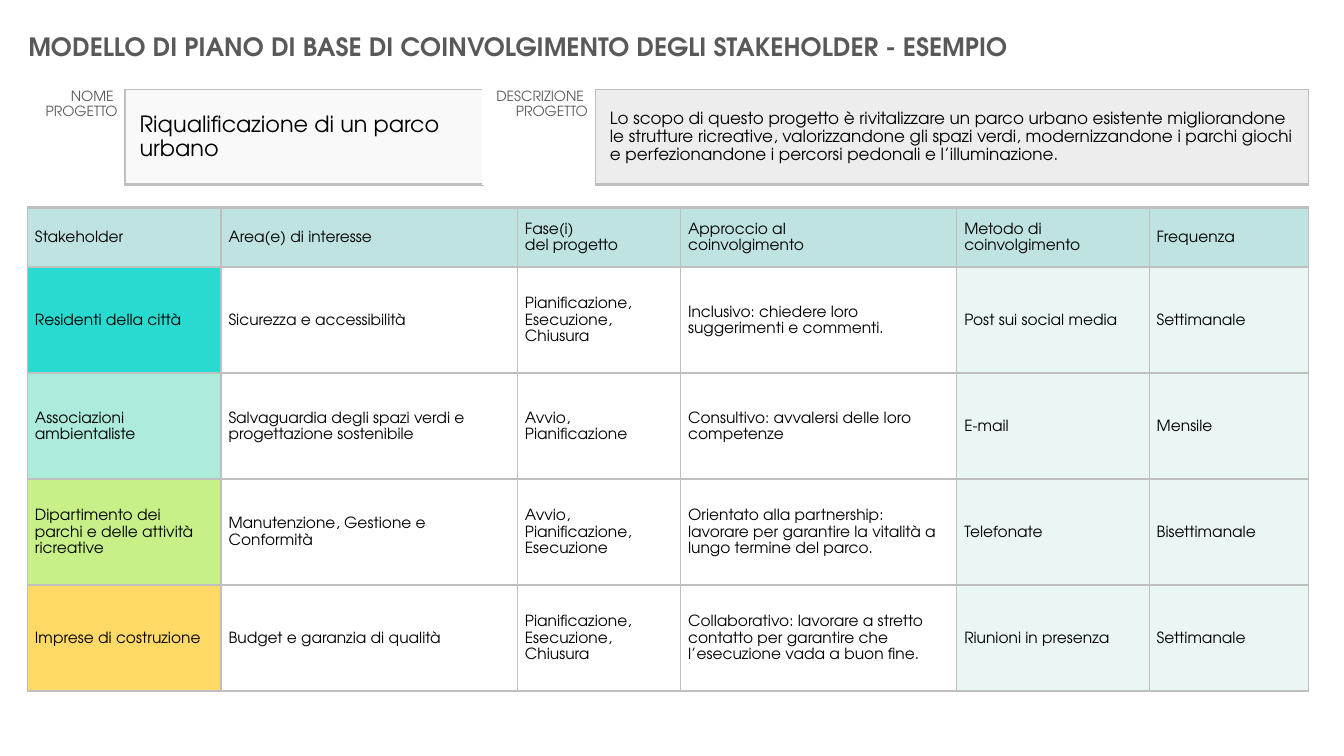
"""Build the stakeholder engagement plan slide for an urban park project."""
from lxml.etree import SubElement
from pptx import Presentation
from pptx.dml.color import RGBColor
from pptx.enum.text import MSO_ANCHOR as Anchor, PP_ALIGN as Align
from pptx.oxml.ns import qn
from pptx.util import Cm, Pt

FONT = "TeX Gyre Adventor"
GREY_TEXT = RGBColor(0x59, 0x59, 0x59)
BLACK = RGBColor(0x00, 0x00, 0x00)
WHITE = RGBColor(0xFF, 0xFF, 0xFF)
BORDER = RGBColor(0xBF, 0xBF, 0xBF)
NAME_FILL = RGBColor(0xF9, 0xF9, 0xF9)
DESCRIPTION_FILL = RGBColor(0xED, 0xED, 0xED)
HEADER_FILL = RGBColor(0xBE, 0xE3, 0xE0)
CONTACT_FILL = RGBColor(0xE9, 0xF6, 0xF4)
TURQUOISE = RGBColor(0x28, 0xDA, 0xCF)
MINT = RGBColor(0xAD, 0xEB, 0xDC)
LIME = RGBColor(0xC8, 0xF0, 0x88)
AMBER = RGBColor(0xFF, 0xD9, 0x66)


def fill_cell(cell, text, size, fill, borders, color=BLACK,
              align=Align.LEFT, anchor=Anchor.MIDDLE, indent=0):
    cell.margin_left = cell.margin_right = Cm(0.19)
    cell.margin_top = cell.margin_bottom = 0
    cell.vertical_anchor = anchor
    paragraph = cell.text_frame.paragraphs[0]
    paragraph.alignment = align
    paragraph.line_spacing = 1.15
    paragraph._p.get_or_add_pPr().set("marL", str(indent))
    for number, line in enumerate(text.split("\n")):
        if number:
            paragraph.add_line_break()
        run = paragraph.add_run()
        run.text = line
        run.font.name = FONT
        run.font.size = Pt(size)
        run.font.color.rgb = color
    if fill is None:
        cell.fill.background()
    else:
        cell.fill.solid()
        cell.fill.fore_color.rgb = fill
    properties = cell._tc.get_or_add_tcPr()
    sides = [side for side in "LRTB" if side in borders]
    for position, side in enumerate(sides):
        line = SubElement(properties, qn(f"a:ln{side}"), w=str(Pt(borders[side])))
        SubElement(SubElement(line, qn("a:solidFill")), qn("a:srgbClr"), val=str(BORDER))
        properties.insert(position, line)


def add_grid(left, top, widths, heights):
    grid = slide.shapes.add_table(len(heights), len(widths), Cm(left), Cm(top),
                                  Cm(sum(widths)), Cm(sum(heights))).table
    grid.first_row = grid.horz_banding = False
    for column, width in zip(grid.columns, widths):
        column.width = Cm(width)
    for row, height in zip(grid.rows, heights):
        row.height = Cm(height)
    return grid


presentation = Presentation()
presentation.slide_width = Cm(33.87)
presentation.slide_height = Cm(19.05)
slide = presentation.slides.add_slide(presentation.slide_layouts[5])

title = slide.shapes.title
title.left, title.top, title.width, title.height = Cm(0.46), Cm(0.66), Cm(30.38), Cm(1.02)
title.text_frame.vertical_anchor = Anchor.TOP
heading = title.text_frame.paragraphs[0]
heading.alignment = Align.LEFT
heading_run = heading.add_run()
heading_run.text = "MODELLO DI PIANO DI BASE DI COINVOLGIMENTO DEGLI STAKEHOLDER - ESEMPIO"
heading_run.font.name = FONT
heading_run.font.size = Pt(18)
heading_run.font.bold = True
heading_run.font.color.rgb = GREY_TEXT

project_facts = [
    (0.46, [2.69, 9.02], "NOME \nPROGETTO", "Riqualificazione di un parco urbano", 16, NAME_FILL),
    (12.17, [2.83, 17.98], "DESCRIZIONE \nPROGETTO",
     "Lo scopo di questo progetto è rivitalizzare un parco urbano esistente "
     "migliorandone le strutture ricreative, valorizzandone gli spazi verdi, "
     "modernizzandone i parchi giochi e perfezionandone i percorsi pedonali "
     "e l’illuminazione.", 12, DESCRIPTION_FILL),
]
for left, widths, label, fact, size, fill in project_facts:
    project = add_grid(left, 2.26, widths, [2.39])
    fill_cell(project.cell(0, 0), label, 10, None, {"R": 1}, GREY_TEXT,
              Align.RIGHT, Anchor.TOP)
    fill_cell(project.cell(0, 1), fact, size, fill,
              {"L": 1, "R": 1, "T": 1, "B": 2.25}, indent=Cm(0.18))

headers = ["Stakeholder", "Area(e) di interesse", "Fase(i) \ndel progetto",
           "Approccio al \ncoinvolgimento", "Metodo di coinvolgimento", "Frequenza"]
stakeholders = [
    ["Residenti della città", "Sicurezza e accessibilità",
     "Pianificazione, Esecuzione, Chiusura",
     "Inclusivo: chiedere loro suggerimenti e commenti.",
     "Post sui social media", "Settimanale"],
    ["Associazioni ambientaliste",
     "Salvaguardia degli spazi verdi e progettazione sostenibile",
     "Avvio, Pianificazione", "Consultivo: avvalersi delle loro competenze",
     "E-mail", "Mensile"],
    ["Dipartimento dei \nparchi e delle attività ricreative",
     "Manutenzione, Gestione e Conformità", "Avvio, Pianificazione, Esecuzione",
     "Orientato alla partnership: lavorare per garantire la vitalità a lungo "
     "termine del parco.", "Telefonate", "Bisettimanale"],
    ["Imprese di costruzione", "Budget e garanzia di qualità",
     "Pianificazione, Esecuzione, Chiusura",
     "Collaborativo: lavorare a stretto contatto per garantire che "
     "l’esecuzione vada a buon fine.", "Riunioni in presenza", "Settimanale"],
]
row_fills = [[HEADER_FILL] * 6] + [
    [accent] + [WHITE] * 3 + [CONTACT_FILL] * 2
    for accent in (TURQUOISE, MINT, LIME, AMBER)]

plan = add_grid(0.69, 5.23, [4.88, 7.47, 4.11, 6.96, 4.85, 4.01], [1.5] + [2.67] * 4)
for row, (texts, fills) in enumerate(zip([headers] + stakeholders, row_fills)):
    borders = {"L": 1, "R": 1, "T": 1 if row else 3, "B": 1}
    for column, (text, fill) in enumerate(zip(texts, fills)):
        fill_cell(plan.cell(row, column), text, 11, fill, borders)

presentation.save("out.pptx")
